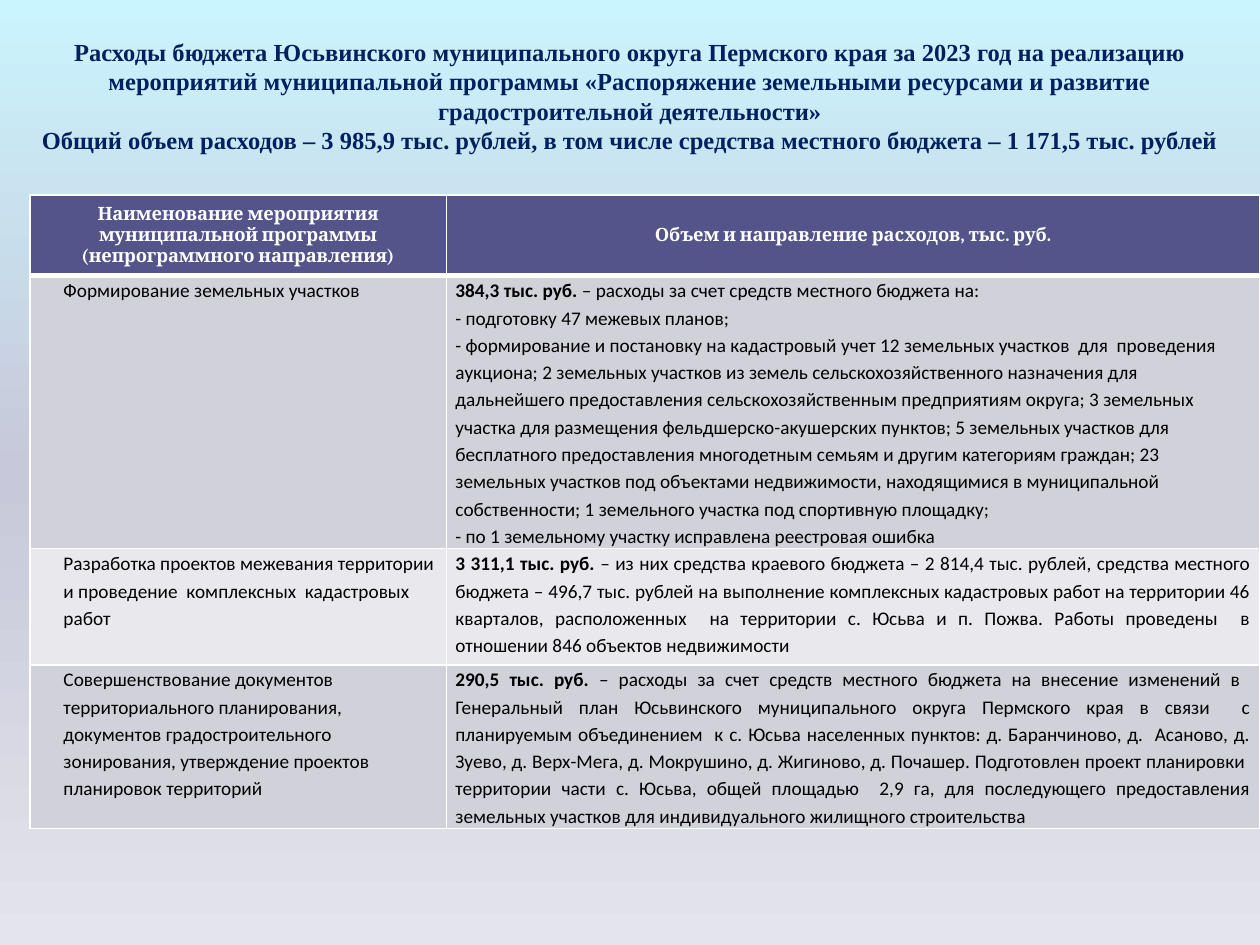
from copy import deepcopy
from dataclasses import dataclass

from lxml.etree import SubElement as Sub
from pptx import Presentation
from pptx.dml.color import RGBColor as Rgb
from pptx.enum.text import MSO_ANCHOR as Anchor, PP_ALIGN as Align
from pptx.oxml.ns import qn
from pptx.util import Cm, Pt


@dataclass(frozen=True)
class Theme:
    sky: tuple = ((0, "CAF4FE"), (0.5, "C7C8D9"), (1, "E4E4EC"))
    navy: str = "002060"
    head: str = "53548A"
    bands: tuple = ("D1D1DA", "E9E9ED")
    white: str = "FFFFFF"
    black: str = "000000"
    serif: str = "Times New Roman"
    top: str = "Cambria"
    body: str = "Calibri"
    big: float = 14
    mid: float = 10.5
    small: float = 11
    tiny: float = 10


@dataclass(frozen=True)
class Item:
    name: str
    sum: str
    lines: tuple
    high: float
    align: Align | None = Align.JUSTIFY
    gap: bool = False


T = Theme()
TITLE = (
    "Расходы бюджета Юсьвинского муниципального округа Пермского края за 2023 год "
    "на реализацию мероприятий муниципальной программы «Распоряжение земельными "
    "ресурсами и развитие градостроительной деятельности»\n"
    "Общий объем расходов – 3 985,9 тыс. рублей, в том числе средства местного "
    "бюджета – 1 171,5 тыс. рублей"
)
HEADS = (
    "Наименование мероприятия муниципальной программы (непрограммного направления)",
    "Объем и направление расходов, тыс. руб.",
)
ITEMS = (
    Item(
        "Формирование земельных участков",
        "384,3 тыс. руб.",
        (
            "– расходы за счет средств местного бюджета на:",
            "- подготовку 47 межевых планов;",
            "- формирование и постановку на кадастровый учет 12 земельных участков  для  "
            "проведения аукциона; 2 земельных участков из земель сельскохозяйственного "
            "назначения для дальнейшего предоставления сельскохозяйственным предприятиям "
            "округа; 3 земельных участка для размещения фельдшерско-акушерских пунктов; "
            "5 земельных участков для бесплатного предоставления многодетным семьям и "
            "другим категориям граждан; 23 земельных участков под объектами недвижимости, "
            "находящимися в муниципальной собственности; 1 земельного участка под "
            "спортивную площадку;",
            "- по 1 земельному участку исправлена реестровая ошибка",
        ),
        1.27, None, True,
    ),
    Item(
        "Разработка проектов межевания территории и проведение  комплексных  "
        "кадастровых работ",
        "3 311,1 тыс. руб. ",
        (
            "– из них средства краевого бюджета – 2 814,4 тыс. рублей, средства местного "
            "бюджета – 496,7 тыс. рублей на выполнение комплексных кадастровых работ на "
            "территории 46 кварталов, расположенных  на территории с. Юсьва и п. Пожва. "
            "Работы проведены  в отношении 846 объектов недвижимости",
        ),
        2.34,
    ),
    Item(
        "Совершенствование документов территориального планирования, документов "
        "градостроительного зонирования, утверждение проектов планировок территорий",
        "290,5 тыс. руб. ",
        (
            "– расходы за счет средств местного бюджета на внесение изменений в  "
            "Генеральный план Юсьвинского муниципального округа Пермского края в связи  "
            "с планируемым объединением  к с. Юсьва населенных пунктов: д. Баранчиново, "
            "д.  Асаново, д. Зуево, д. Верх-Мега, д. Мокрушино, д. Жигиново, д. Почашер. "
            "Подготовлен проект планировки  территории части с. Юсьва, общей площадью  "
            "2,9 га, для последующего предоставления земельных участков для "
            "индивидуального жилищного строительства",
        ),
        1.96,
    ),
)


def write(para, text: str, *, font=T.body, size=T.small, color=T.black,
          bold=False, align=None, space=None) -> None:
    """Add text to a paragraph; a newline becomes a line break."""
    if align is not None:
        para.alignment = align
    if space:
        para.line_spacing = space
    for num, part in enumerate(text.split("\n")):
        if num:
            para.add_line_break()
        run = para.add_run()
        run.text = part
        run.font.name = font
        run.font.size = Pt(size)
        run.font.bold = bold
        run.font.color.rgb = Rgb.from_string(color)


def paint(slide) -> None:
    fill = slide.background.fill
    fill.gradient()
    fill.gradient_angle = 270
    stops = slide.element.find(".//" + qn("a:gsLst"))
    stops.append(deepcopy(stops[0]))
    for stop, (pos, color) in zip(fill.gradient_stops, T.sky):
        stop.position = pos
        stop.color.rgb = Rgb.from_string(color)


def dress(cell, color: str, top: float = 1, base: float = 1) -> None:
    """Fill a cell and give it white borders."""
    props = cell._tc.get_or_add_tcPr()
    for side, wide in (("L", 1), ("R", 1), ("T", top), ("B", base)):
        line = Sub(props, qn(f"a:ln{side}"), w=str(Pt(wide)))
        fill = Sub(line, qn("a:solidFill"))
        Sub(fill, qn("a:srgbClr"), val=T.white)
    cell.fill.solid()
    cell.fill.fore_color.rgb = Rgb.from_string(color)


def pad(cell) -> None:
    cell.margin_left = cell.margin_right = Cm(0.18)
    cell.margin_top = cell.margin_bottom = 0


def fill_row(row, item: Item, color: str, top: float) -> None:
    row.height = Cm(item.high)
    for cell in row.cells:
        dress(cell, color, top)
        pad(cell)
    name, body = (cell.text_frame for cell in row.cells)
    para = name.paragraphs[0]
    para._p.get_or_add_pPr().set("marL", str(Cm(0.5)))
    write(para, item.name, space=1.15)
    for num, line in enumerate(item.lines):
        para = body.add_paragraph() if num else body.paragraphs[0]
        if not num:
            write(para, item.sum, bold=True)
            if item.gap:
                write(para, " ", font=T.serif, size=T.tiny)
        write(para, line, align=item.align, space=1.15)


def add_grid(slide) -> None:
    frame = slide.shapes.add_table(
        len(ITEMS) + 1, len(HEADS), Cm(0.6), Cm(3.93), Cm(24.8), Cm(12.52))
    grid = frame.table
    grid.horz_banding = False
    for col, wide in zip(grid.columns, (8.4, 16.4)):
        col.width = Cm(wide)
    rows = list(grid.rows)
    rows[0].height = Cm(1.63)
    for cell, text in zip(rows[0].cells, HEADS):
        dress(cell, T.head, base=3)
        cell.vertical_anchor = Anchor.MIDDLE
        write(cell.text_frame.paragraphs[0], text, font=T.top, size=T.mid,
              color=T.white, bold=True, align=Align.CENTER)
    for num, (row, item) in enumerate(zip(rows[1:], ITEMS)):
        fill_row(row, item, T.bands[num % 2], 1 if num else 3)
    frame.height = Cm(12.52)


def add_title(slide) -> None:
    title = slide.shapes.title
    title.left, title.top = Cm(0), Cm(0.13)
    title.width, title.height = Cm(25.4), Cm(3.6)
    title.text_frame.word_wrap = True
    title.text_frame.vertical_anchor = Anchor.MIDDLE
    write(title.text_frame.paragraphs[0], TITLE, font=T.serif, size=T.big,
          color=T.navy, bold=True, align=Align.CENTER)


def main() -> None:
    deck = Presentation()
    deck.slide_width, deck.slide_height = Cm(25.4), Cm(19.05)
    slide = deck.slides.add_slide(deck.slide_layouts[5])
    paint(slide)
    add_title(slide)
    add_grid(slide)
    deck.save("out.pptx")


if __name__ == "__main__":
    main()
